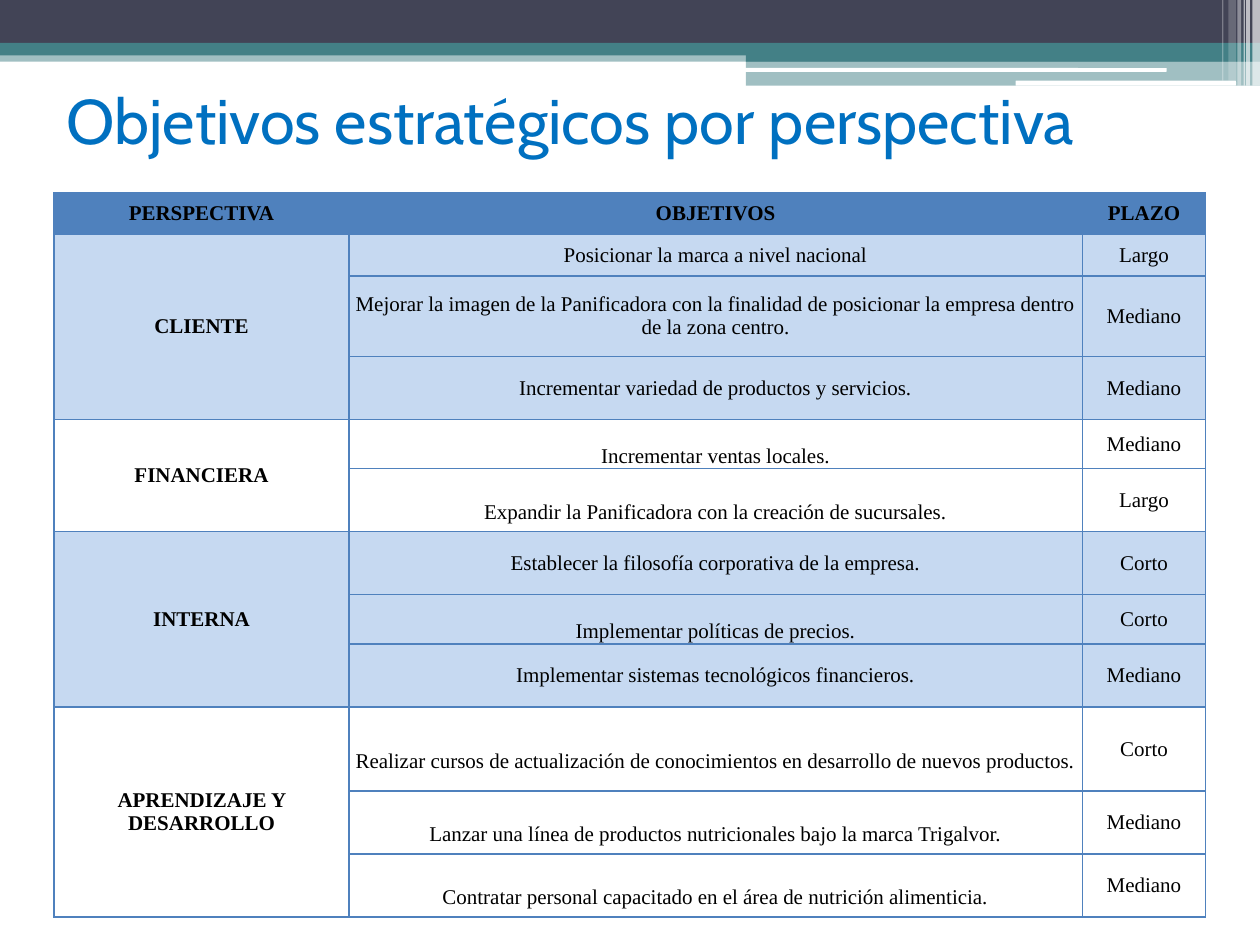
"""Build the slide of strategic objectives by perspective."""
from pptx import Presentation
from pptx.dml.color import RGBColor
from pptx.enum.shapes import MSO_SHAPE
from pptx.enum.text import MSO_ANCHOR, PP_ALIGN
from pptx.oxml import parse_xml
from pptx.oxml.ns import nsdecls
from pptx.util import Inches, Pt

RECTANGLE = MSO_SHAPE.RECTANGLE
ROUNDED = MSO_SHAPE.ROUNDED_RECTANGLE
MIDDLE = MSO_ANCHOR.MIDDLE
CENTER = PP_ALIGN.CENTER
NAVY, TEAL, WHITE = "424456", "438086", "FFFFFF"
BLUE, PALE_BLUE, TITLE_BLUE, BLACK = "4F81BD", "C6D9F1", "0070C0", "000000"
LINE_HEIGHT = 0.19


def color(value):
    """Turn a hex string into a colour."""
    return RGBColor.from_string(value)


def write(para, text, font, size, ink, bold=False):
    """Add one styled run to a paragraph."""
    span = para.add_run()
    span.text = text
    span.font.name = font
    span.font.size = Pt(size)
    span.font.bold = bold
    span.font.color.rgb = color(ink)


deck = Presentation()
deck.slide_width = Inches(10)
deck.slide_height = Inches(7.5)
page = deck.slides.add_slide(deck.slide_layouts[6])

bands = [
    (RECTANGLE, 0, 0.4, 10, 0.09, TEAL, 50),
    (RECTANGLE, 0, 0, 10, 0.34, NAVY, 100),
    (RECTANGLE, 0, 0.34, 10, 0.1, TEAL, 100),
    (RECTANGLE, 5.92, 0.39, 4.08, 0.1, TEAL, 100),
    (RECTANGLE, 5.92, 0.48, 4.08, 0.2, TEAL, 50),
    (ROUNDED, 5.91, 0.54, 3.35, 0.03, WHITE, 100),
    (ROUNDED, 8.06, 0.64, 1.75, 0.04, WHITE, 100),
]
stripes = [
    (9.94, 0.06, 0.68, 65),
    (9.89, 0.03, 0.68, 65),
    (9.87, 0.01, 0.68, 60),
    (9.82, 0.03, 0.68, 40),
    (9.75, 0.06, 0.64, 20),
    (9.7, 0.01, 0.64, 30),
]
for left, width, height, opacity in stripes:
    bands.append((RECTANGLE, left, 0, width, height, WHITE, opacity))

for preset, left, top, width, height, paint, opacity in bands:
    band = page.shapes.add_shape(
        preset, Inches(left), Inches(top), Inches(width), Inches(height))
    band.shadow.inherit = False
    band.line.fill.background()
    band.fill.solid()
    band.fill.fore_color.rgb = color(paint)
    if opacity < 100:
        tint = band._element.spPr.xpath("./a:solidFill/a:srgbClr")[0]
        tint.append(parse_xml(f'<a:alpha {nsdecls("a")} val="{opacity * 1000}"/>'))

title = page.shapes.add_textbox(Inches(0.43), Inches(0.36), Inches(9.23), Inches(1.17))
title.text_frame.word_wrap = True
title.text_frame.vertical_anchor = MIDDLE
write(title.text_frame.paragraphs[0], "Objetivos estratégicos por perspectiva",
      "Cabin", 36, TITLE_BLUE)

perspectives = [
    ("CLIENTE", PALE_BLUE, [
        ("Posicionar la marca a nivel nacional", "Largo", 0.33, 0),
        ("Mejorar la imagen de la Panificadora con la finalidad de posicionar "
         "la empresa dentro de la zona centro.", "Mediano", 0.64, 0),
        ("Incrementar variedad de productos y servicios.", "Mediano", 0.5, 0),
    ]),
    ("FINANCIERA", None, [
        ("Incrementar ventas locales.", "Mediano", 0.38, LINE_HEIGHT),
        ("Expandir la Panificadora con la creación de sucursales.",
         "Largo", 0.5, LINE_HEIGHT),
    ]),
    ("INTERNA", PALE_BLUE, [
        ("Establecer la filosofía corporativa de la empresa.", "Corto", 0.5, 0),
        ("Implementar políticas de precios.", "Corto", 0.38, LINE_HEIGHT),
        ("Implementar sistemas tecnológicos financieros.", "Mediano", 0.5, 0),
    ]),
    ("APRENDIZAJE Y DESARROLLO", None, [
        ("Realizar cursos de actualización de conocimientos en desarrollo de "
         "nuevos productos.", "Corto", 0.67, LINE_HEIGHT),
        ("Lanzar una línea de productos nutricionales bajo la marca Trigalvor.",
         "Mediano", 0.5, LINE_HEIGHT),
        ("Contratar personal capacitado en el área de nutrición alimenticia.",
         "Mediano", 0.5, LINE_HEIGHT),
    ]),
]
rows = [(("PERSPECTIVA", "OBJETIVOS", "PLAZO"), BLUE, 0.33, 0)]
merges = []
for name, paint, objectives in perspectives:
    merges.append((len(rows), len(rows) + len(objectives) - 1))
    for index, (objective, term, height, margin) in enumerate(objectives):
        label = "" if index else name
        rows.append(((label, objective, term), paint, height, margin))

frame = page.shapes.add_table(
    len(rows), 3, Inches(0.43), Inches(1.53), Inches(9.14), Inches(5.73))
table = frame.table
table.first_row = False
table.horz_banding = False
for column, width in zip(table.columns, (2.34, 5.82, 0.98)):
    column.width = Inches(width)

for row_index, (texts, paint, height, margin) in enumerate(rows):
    table.rows[row_index].height = Inches(height)
    for column_index, text in enumerate(texts):
        cell = table.cell(row_index, column_index)
        cell.vertical_anchor = MIDDLE
        cell.margin_left = cell.margin_right = Inches(0.05)
        cell.margin_top = Inches(margin if column_index == 1 else 0)
        cell.margin_bottom = Inches(0)
        for side in "LRTB":
            cell._tc.get_or_add_tcPr().append(parse_xml(
                f'<a:ln{side} {nsdecls("a")} w="12700"><a:solidFill>'
                f'<a:srgbClr val="{BLUE}"/></a:solidFill></a:ln{side}>'))
        if paint:
            cell.fill.solid()
            cell.fill.fore_color.rgb = color(paint)
        else:
            cell.fill.background()
        if text:
            para = cell.text_frame.paragraphs[0]
            para.alignment = CENTER
            bold = row_index == 0 or column_index == 0
            write(para, text, "Times New Roman", 12, BLACK, bold)

for first, last in merges:
    table.cell(first, 0).merge(table.cell(last, 0))

deck.save("out.pptx")
